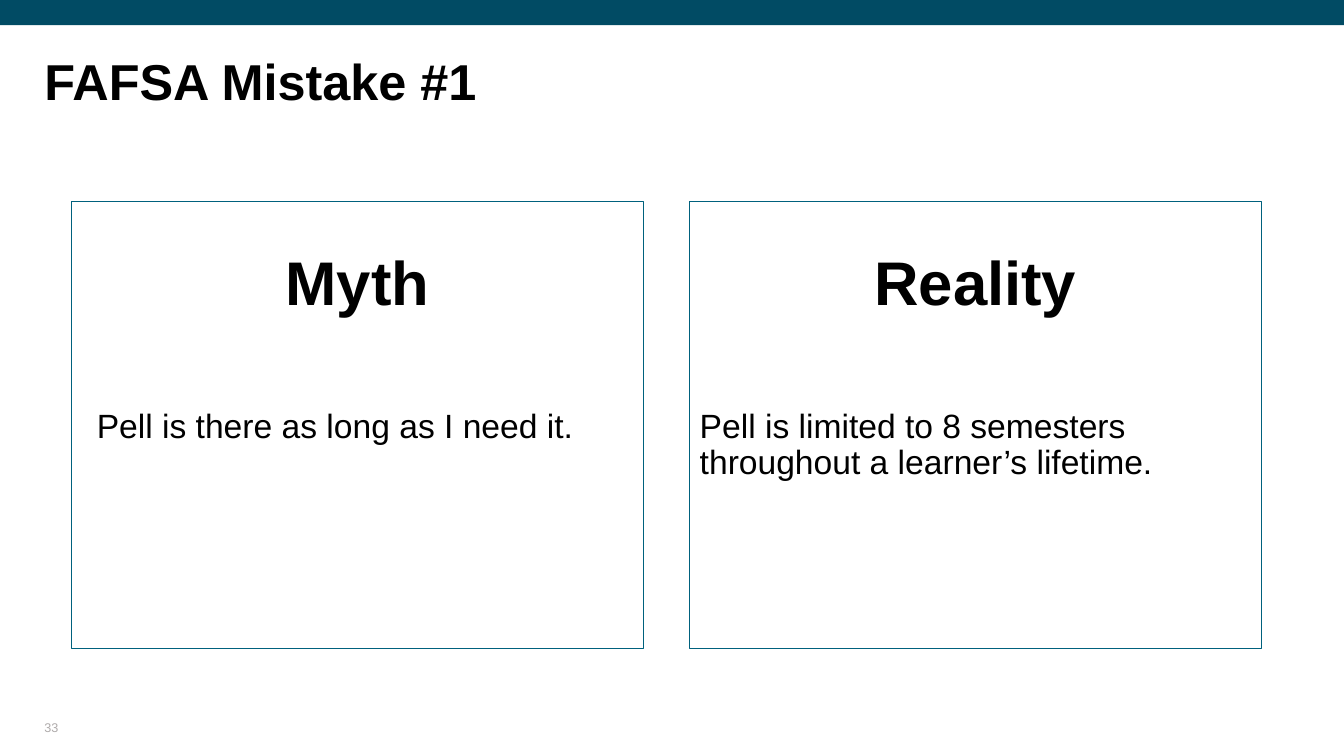
from pptx import Presentation
from pptx.dml.color import RGBColor
from pptx.enum.shapes import MSO_SHAPE
from pptx.enum.text import MSO_ANCHOR, MSO_AUTO_SIZE, PP_ALIGN
from pptx.oxml.ns import qn
from pptx.util import Pt
from lxml import etree

PX = 9144
FONT = "Arial"
BLACK = RGBColor(0x00, 0x00, 0x00)
GRAY = RGBColor(0xAF, 0xAB, 0xAB)
TEAL = RGBColor(0x01, 0x4B, 0x64)
BORDER = RGBColor(0x00, 0x61, 0x7D)


def place(sp, x, y, w, h):
    sp.left, sp.top, sp.width, sp.height = [v * PX for v in (x, y, w, h)]


def set_frame(tf, anchor, left=0, top=0, right=0, bottom=0):
    tf.word_wrap = True
    tf.auto_size = MSO_AUTO_SIZE.NONE
    tf.vertical_anchor = anchor
    tf.margin_left, tf.margin_top = left * PX, top * PX
    tf.margin_right, tf.margin_bottom = right * PX, bottom * PX


def style(p, size, bold=False, color=BLACK, align=PP_ALIGN.LEFT):
    p.alignment = align
    for r in p.runs:
        r.font.name = FONT
        r.font.size = Pt(size)
        r.font.bold = bold
        r.font.color.rgb = color


def add_bar(s):
    sp = s.shapes.add_shape(MSO_SHAPE.RECTANGLE, 0, 0, 1333 * PX, 25 * PX)
    sp.shadow.inherit = False
    sp.fill.solid()
    sp.fill.fore_color.rgb = TEAL
    sp.line.fill.background()


def fill_title(sp, text):
    place(sp, 44, 57, 1241, 127)
    tf = sp.text_frame
    set_frame(tf, MSO_ANCHOR.TOP)
    tf.text = text
    p = tf.paragraphs[0]
    p.line_spacing = 0.9
    style(p, 36, bold=True)


def fill_panel(sp, x, inset, heading, body):
    place(sp, x, 200, 567, 443)
    sp.line.color.rgb = BORDER
    sp.line.width = Pt(0.75)
    tf = sp.text_frame
    set_frame(tf, MSO_ANCHOR.TOP, inset, 50, inset, 5)
    tf.text = f"{heading}\n{body}"
    for p in tf.paragraphs:
        pPr = p._p.get_or_add_pPr()
        pPr.set("marL", "0")
        pPr.set("indent", "0")
        etree.SubElement(pPr, qn("a:buNone"))
        p.line_spacing = 0.9
    title, text = tf.paragraphs
    title.space_before = Pt(0)
    text.space_before = Pt(65)
    style(title, 44, bold=True, align=PP_ALIGN.CENTER)
    style(text, 24)


def add_page_number(s, number):
    sp = s.shapes.add_textbox(44 * PX, 705 * PX, 300 * PX, 24 * PX)
    tf = sp.text_frame
    set_frame(tf, MSO_ANCHOR.BOTTOM)
    tf.text = number
    style(tf.paragraphs[0], 9, color=GRAY)


def main():
    prs = Presentation()
    prs.slide_width, prs.slide_height = 1333 * PX, 750 * PX
    s = prs.slides.add_slide(prs.slide_layouts[3])
    add_bar(s)
    fill_title(s.shapes.title, "FAFSA Mistake #1")
    fill_panel(s.placeholders[1], 71, 25, "Myth", "Pell is there as long as I need it.")
    fill_panel(s.placeholders[2], 684, 10, "Reality",
               "Pell is limited to 8 semesters throughout a learner’s lifetime.")
    add_page_number(s, "33")
    prs.save("out.pptx")


if __name__ == "__main__":
    main()
